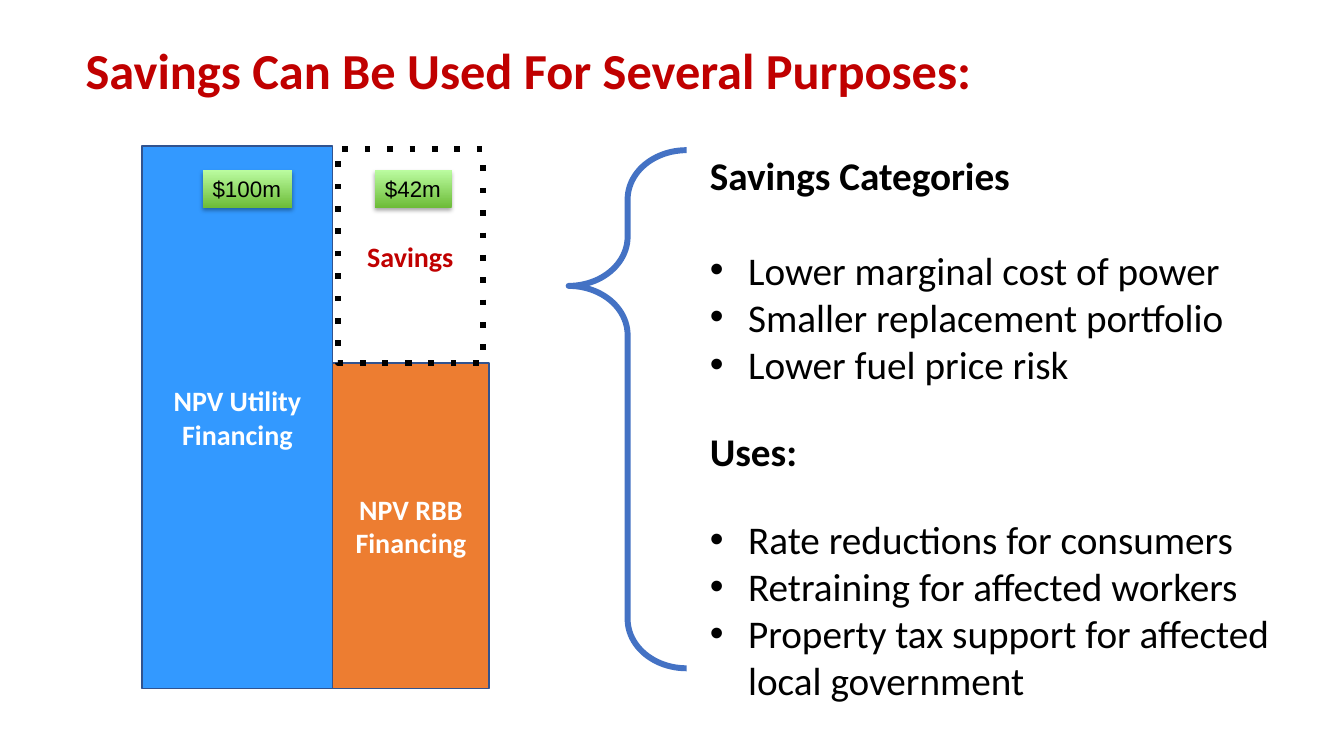
from lxml import etree
from pptx import Presentation
from pptx.dml.color import RGBColor
from pptx.enum.dml import MSO_LINE
from pptx.enum.shapes import MSO_SHAPE
from pptx.enum.text import MSO_ANCHOR, MSO_AUTO_SIZE, PP_ALIGN
from pptx.oxml.ns import qn
from pptx.util import Inches, Pt

RECTANGLE, LEFT_BRACE = MSO_SHAPE.RECTANGLE, MSO_SHAPE.LEFT_BRACE
ROUND_DOT = MSO_LINE.ROUND_DOT
TOP, MIDDLE = MSO_ANCHOR.TOP, MSO_ANCHOR.MIDDLE
NO_FIT, GROW = MSO_AUTO_SIZE.NONE, MSO_AUTO_SIZE.SHAPE_TO_FIT_TEXT
LEFT, CENTER = PP_ALIGN.LEFT, PP_ALIGN.CENTER

RED = RGBColor(0xC0, 0x00, 0x00)
BLACK = RGBColor(0x00, 0x00, 0x00)
WHITE = RGBColor(0xFF, 0xFF, 0xFF)
BLUE = RGBColor(0x33, 0x99, 0xFF)
ORANGE = RGBColor(0xED, 0x7D, 0x31)
BAR_EDGE = RGBColor(0x31, 0x53, 0x8F)
BRACE_BLUE = RGBColor(0x44, 0x72, 0xC4)
DARK_GREEN = RGBColor(0x6D, 0xBC, 0x38)
LIGHT_GREEN = RGBColor(0xBB, 0xFC, 0xA0)

TITLE = "Savings Can Be Used For Several Purposes:"
SECTIONS = [
    ("Savings Categories", 34, [
        "Lower marginal cost of power",
        "Smaller replacement portfolio",
        "Lower fuel price risk",
    ]),
    ("Uses:", 29, [
        "Rate reductions for consumers",
        "Retraining for affected workers",
        "Property tax support for affected local government",
    ]),
]
SECTION_GAP = 29
BULLET_INDENT = 0.38

BAR_LEFT, BAR_TOP, BAR_BOTTOM = 1.41, 1.45, 6.83
UTILITY_WIDTH, RBB_WIDTH, RBB_TOP = 1.89, 1.55, 3.6
RBB_LEFT = BAR_LEFT + UTILITY_WIDTH
BARS = [
    ("NPV Utility Financing", BAR_LEFT, BAR_TOP, UTILITY_WIDTH, BLUE),
    ("NPV RBB Financing", RBB_LEFT, RBB_TOP, RBB_WIDTH, ORANGE),
]
SAVINGS_BOX = (3.35, 1.48, 1.44, 2.12)
BRACE_BOX = (5.64, 1.49, 1.17, 5.14)
TAG_TOP, TAG_HEIGHT = 1.69, 0.37
TAGS = [("$42m", 3.72, 0.76), ("$100m", 2.01, 0.89)]


def place(shape, left, top, width, height):
    shape.left, shape.top = Inches(left), Inches(top)
    shape.width, shape.height = Inches(width), Inches(height)


def write(para, text, size, color, bold, align, font="Calibri"):
    para.alignment = align
    span = para.add_run()
    span.text = text
    span.font.name = font
    span.font.size = Pt(size)
    span.font.bold = bold
    span.font.color.rgb = color


def add_box(page, kind, box, line_color=None, line_width=None):
    shape = page.shapes.add_shape(kind, *map(Inches, box))
    shape.shadow.inherit = False
    if line_color is None:
        shape.line.fill.background()
    else:
        shape.line.color.rgb = line_color
        shape.line.width = Pt(line_width)
    return shape


def set_bullet(para, bulleted):
    properties = para._p.get_or_add_pPr()
    indent = Inches(BULLET_INDENT) if bulleted else 0
    properties.set("marL", str(indent))
    properties.set("indent", str(-indent))
    if bulleted:
        etree.SubElement(properties, qn("a:buFont"), typeface="Arial")
        etree.SubElement(properties, qn("a:buChar"), char="•")
    else:
        etree.SubElement(properties, qn("a:buNone"))


def add_title(page):
    title = page.shapes.title
    place(title, 0.75, 0, 9.95, 1.45)
    frame = title.text_frame
    frame.word_wrap = True
    frame.auto_size = NO_FIT
    frame.vertical_anchor = MIDDLE
    para = frame.paragraphs[0]
    para.line_spacing = 0.9
    write(para, TITLE, 36, RED, True, LEFT)


def add_savings_list(page):
    body = page.placeholders[1]
    place(body, 6.94, 1.45, 6.19, 5.6)
    frame = body.text_frame
    frame.word_wrap = True
    frame.auto_size = NO_FIT
    frame.vertical_anchor = TOP
    lines = []
    for heading, gap, items in SECTIONS:
        lines.append((heading, SECTION_GAP if lines else 0, False))
        for index, item in enumerate(items):
            lines.append((item, 0 if index else gap, True))
    for index, (text, gap, bulleted) in enumerate(lines):
        para = frame.add_paragraph() if index else frame.paragraphs[0]
        set_bullet(para, bulleted)
        para.space_before = Pt(gap)
        write(para, text, 28, BLACK, not bulleted, LEFT)


def add_bars(page):
    for label, left, top, width, color in BARS:
        bar = add_box(page, RECTANGLE, (left, top, width, BAR_BOTTOM - top), BAR_EDGE, 1)
        bar.fill.solid()
        bar.fill.fore_color.rgb = color
        write(bar.text_frame.paragraphs[0], label, 20, WHITE, True, CENTER)
    savings = add_box(page, RECTANGLE, SAVINGS_BOX, BLACK, 4)
    savings.fill.background()
    savings.line.dash_style = ROUND_DOT
    savings._element.find(".//" + qn("a:prstDash")).set("val", "dot")
    write(savings.text_frame.paragraphs[0], "Savings", 20, RED, True, CENTER)


def add_brace(page):
    brace = add_box(page, LEFT_BRACE, BRACE_BOX, BRACE_BLUE, 4.25)
    brace.fill.background()
    brace.adjustments[0] = 0.417
    brace.adjustments[1] = 0.262


def add_tags(page):
    for text, left, width in TAGS:
        tag = add_box(page, RECTANGLE, (left, TAG_TOP, width, TAG_HEIGHT))
        tag.fill.gradient()
        tag.fill.gradient_angle = 90
        for stop, color in zip(tag.fill.gradient_stops, (DARK_GREEN, LIGHT_GREEN)):
            stop.color.rgb = color
        effects = tag._element.spPr.find(qn("a:effectLst"))
        shadow = etree.SubElement(
            effects, qn("a:outerShdw"), blurRad=str(Pt(3.1)), dist=str(Pt(1.8)),
            dir="5400000", rotWithShape="0")
        shade = etree.SubElement(shadow, qn("a:srgbClr"), val=str(BLACK))
        etree.SubElement(shade, qn("a:alpha"), val="35000")
        frame = tag.text_frame
        frame.word_wrap = False
        frame.auto_size = GROW
        write(frame.paragraphs[0], text, 16, BLACK, False, LEFT, "Arial")


def main():
    deck = Presentation()
    deck.slide_width, deck.slide_height = Inches(13.33), Inches(7.5)
    page = deck.slides.add_slide(deck.slide_layouts[1])
    add_title(page)
    add_brace(page)
    add_bars(page)
    add_savings_list(page)
    add_tags(page)
    deck.save("out.pptx")


if __name__ == "__main__":
    main()
